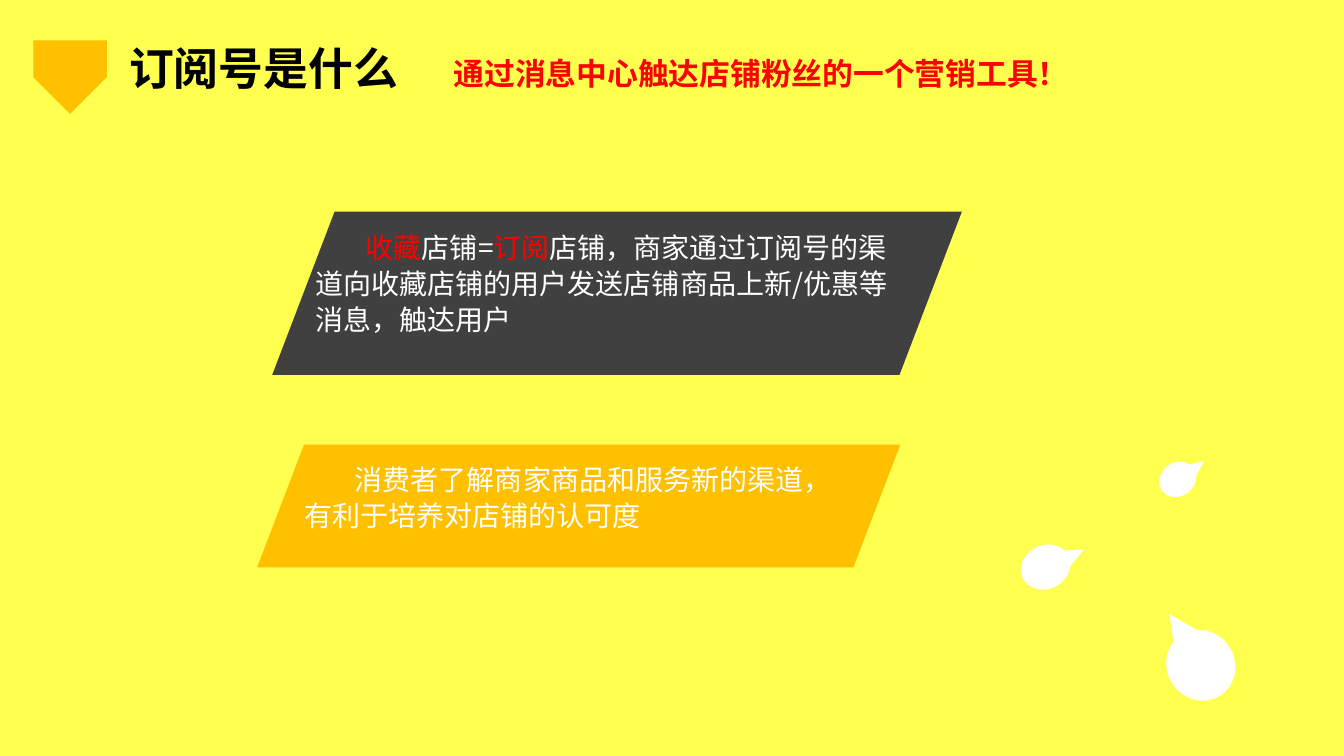
from dataclasses import dataclass

import pptx
import pptx.dml.color
import pptx.enum.shapes
import pptx.enum.text
import pptx.oxml.ns
import pptx.util
from pptx.util import Inches

COLORS = {
    "yellow": "FFFF4F",
    "amber": "FFC000",
    "charcoal": "404040",
    "white": "FFFFFF",
    "black": "000000",
    "red": "FF0000",
}
CJK_FONT = "Noto Sans CJK SC"
SHAPE = pptx.enum.shapes.MSO_SHAPE
ANCHOR = pptx.enum.text.MSO_ANCHOR

Box = tuple[float, float, float, float]
Words = tuple[str, str]  # text and colour name


@dataclass(frozen=True)
class Drop:
    body: Box
    tip: Box
    rotation: float


@dataclass(frozen=True)
class Banner:
    outline: Box
    text_box: Box
    color: str
    words: tuple[Words, ...]


DROPS = (
    Drop((11.52, 4.57, 0.32, 0.37), (11.66, 4.51, 0.3, 0.33), 53.1),
    Drop((10.16, 5.38, 0.42, 0.49), (10.36, 5.33, 0.39, 0.44), 63.4),
    Drop((11.58, 6.25, 0.66, 0.7), (11.47, 6.04, 0.61, 0.63), 326.3),
)
BANNERS = (
    Banner(
        (2.55, 4.41, 6.38, 1.22), (2.92, 4.51, 5.4, 1.05), "amber",
        (("消费者了解商家商品和服务新的渠道，有利于培养对店铺的认可度", "white"),),
    ),
    Banner(
        (2.7, 2.1, 6.84, 1.62), (3.03, 2.21, 6.04, 1.15), "charcoal",
        (
            ("收藏", "red"),
            ("店铺=", "white"),
            ("订阅", "red"),
            ("店铺，商家通过订阅号的渠道向收藏店铺的用户发送店铺商品上新/优惠等消息，触达用户", "white"),
        ),
    ),
)


def rgb(name: str) -> pptx.dml.color.RGBColor:
    return pptx.dml.color.RGBColor.from_string(COLORS[name])


def add_filled(shapes, kind, box: Box, color: str, rotation: float = 0,
               adjustments: tuple[float, ...] = (), outlined: bool = False):
    shape = shapes.add_shape(kind, *map(Inches, box))
    shape.shadow.inherit = False
    shape.rotation = rotation
    shape.fill.solid()
    shape.fill.fore_color.rgb = rgb(color)
    if outlined:
        shape.line.color.rgb = rgb(color)
        shape.line.width = pptx.util.Pt(1)
    else:
        shape.line.fill.background()
    for index, value in enumerate(adjustments):
        shape.adjustments[index] = value
    return shape


def write(holder, words: tuple[Words, ...], size: int, latin: str = CJK_FONT,
          bold: bool = False, spacing: float = 1.0, indent: float = 0,
          anchor=ANCHOR.TOP, wrap: bool = True) -> None:
    frame = holder.text_frame
    frame.word_wrap = wrap
    frame.auto_size = pptx.enum.text.MSO_AUTO_SIZE.NONE
    frame.vertical_anchor = anchor
    paragraph = frame.paragraphs[0]
    paragraph.alignment = pptx.enum.text.PP_ALIGN.LEFT
    paragraph.line_spacing = spacing
    if indent:
        properties = paragraph._p.get_or_add_pPr()
        properties.set("marL", "0")
        properties.set("indent", str(Inches(indent)))
    for text, color in words:
        run = paragraph.add_run()
        run.text = text
        run.font.size = pptx.util.Pt(size)
        run.font.bold = bold
        run.font.color.rgb = rgb(color)
        run.font.name = latin
        east_asian = pptx.oxml.ns.qn("a:ea")
        latin_font = run.font._element.find(pptx.oxml.ns.qn("a:latin"))
        latin_font.addnext(latin_font.makeelement(east_asian, {"typeface": CJK_FONT}))


def add_drop(slide, drop: Drop) -> None:
    group = slide.shapes.add_group_shape()
    add_filled(group.shapes, SHAPE.OVAL, drop.body, "white", drop.rotation, outlined=True)
    add_filled(group.shapes, SHAPE.ISOSCELES_TRIANGLE, drop.tip, "white", drop.rotation)


def add_banner(slide, banner: Banner) -> None:
    add_filled(slide.shapes, SHAPE.PARALLELOGRAM, banner.outline, banner.color,
               adjustments=(0.382,))
    message = slide.shapes.add_textbox(*map(Inches, banner.text_box))
    write(message, banner.words, 20, spacing=1.08, indent=0.5)


def main() -> None:
    deck = pptx.Presentation()
    deck.slide_width, deck.slide_height = Inches(13.33), Inches(7.5)
    slide = deck.slides.add_slide(deck.slide_layouts.get_by_name("Title Only"))
    slide.background.fill.solid()
    slide.background.fill.fore_color.rgb = rgb("yellow")

    for drop in DROPS:
        add_drop(slide, drop)

    title = slide.shapes.title
    title.left, title.top, title.width, title.height = map(Inches, (1.18, 0.27, 3.23, 0.98))
    write(title, (("订阅号是什么", "black"),), 32, bold=True, spacing=1.15)

    for banner in BANNERS:
        add_banner(slide, banner)

    add_filled(slide.shapes, SHAPE.SNIP_2_SAME_RECTANGLE, (0.33, 0.4, 0.73, 0.73),
               "amber", 180, (0.5, 0))
    tagline = slide.shapes.add_textbox(*map(Inches, (4.4, 0.49, 6.37, 0.47)))
    write(tagline, (("通过消息中心触达店铺粉丝的一个营销工具！", "red"),), 22,
          latin="Calibri", bold=True, anchor=ANCHOR.MIDDLE, wrap=False)

    deck.save("out.pptx")


if __name__ == "__main__":
    main()
